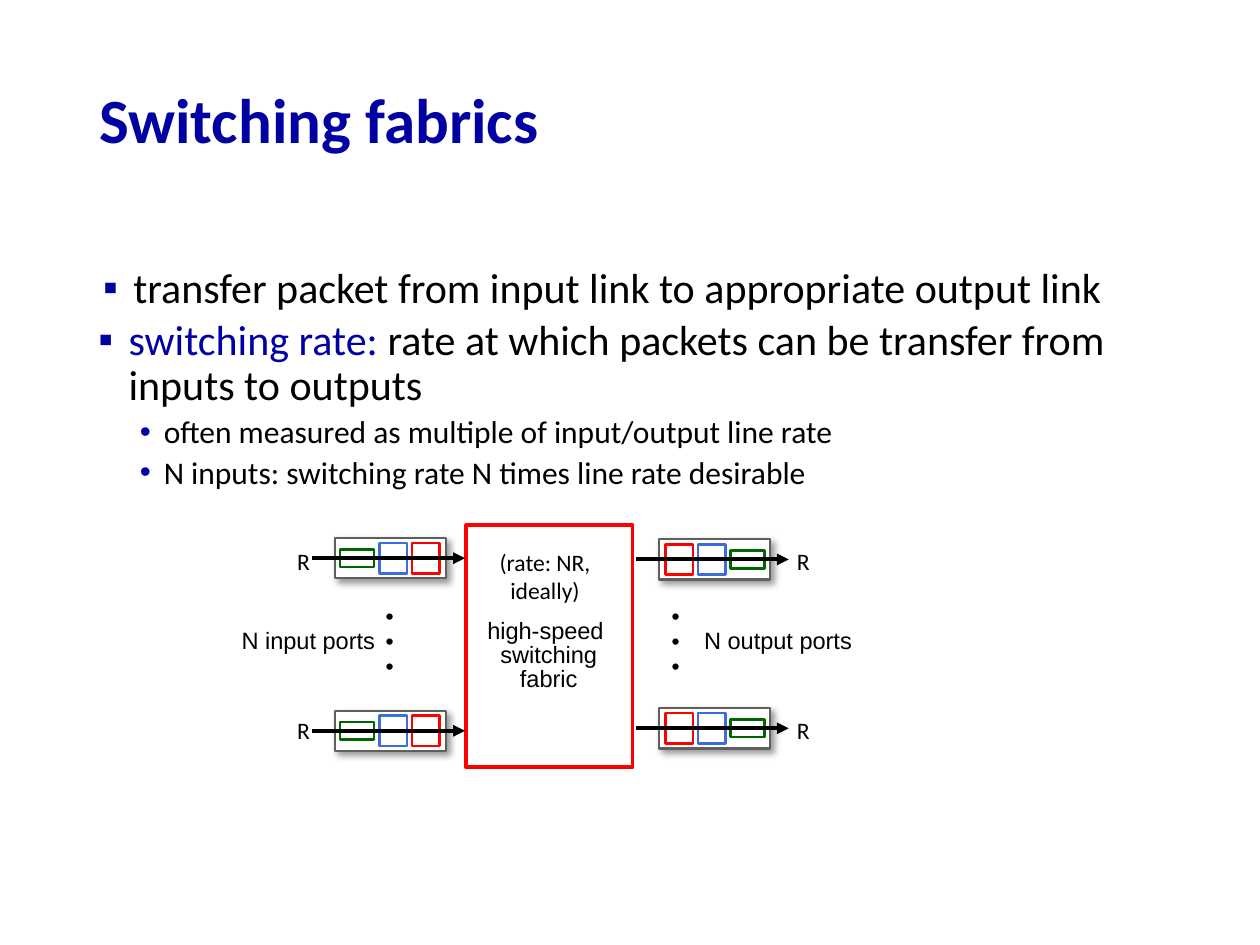
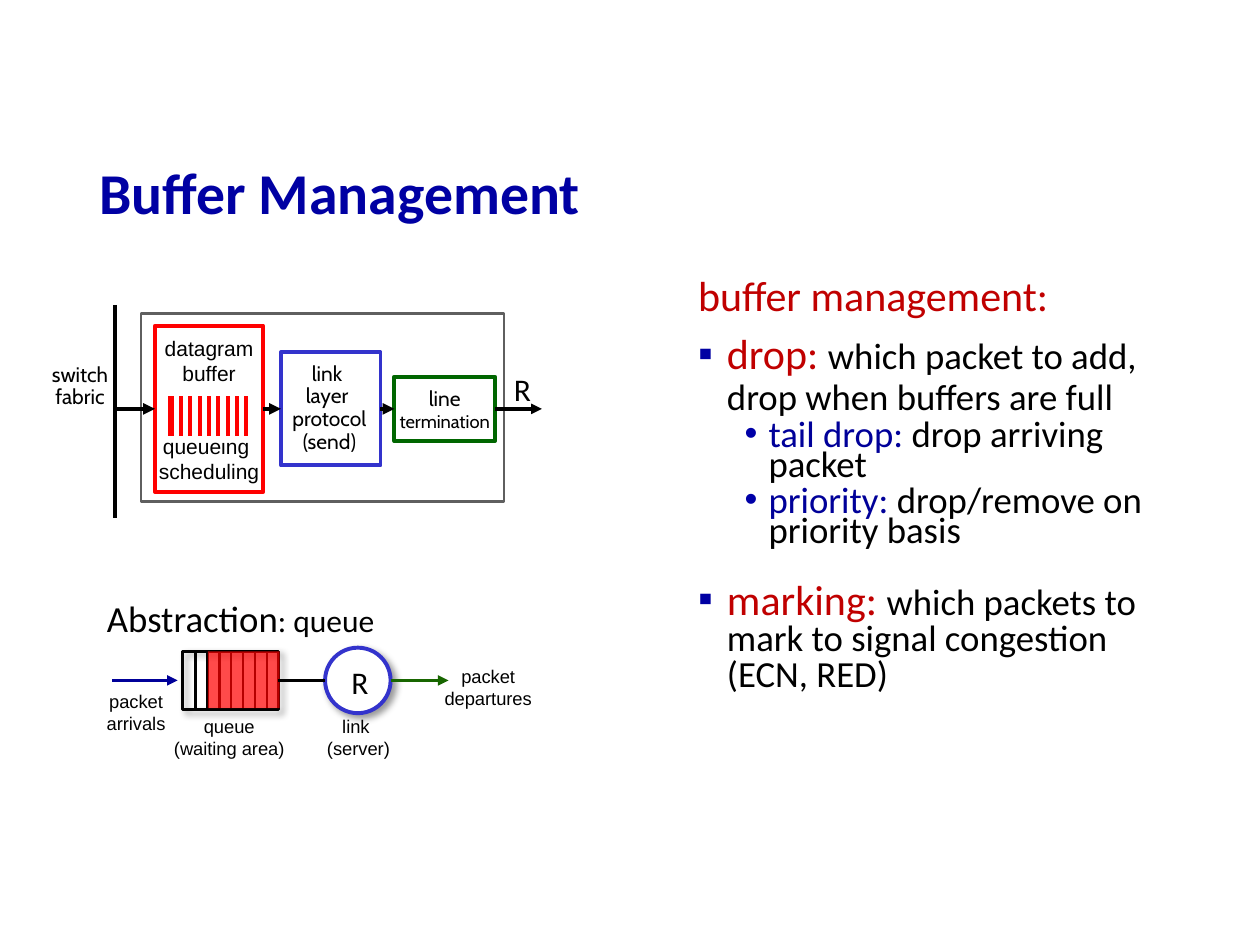
"""Builds two slides on switching fabrics and buffer management."""
import lxml.etree
import pptx
import pptx.dml.color
import pptx.enum.shapes
import pptx.enum.text
import pptx.oxml.ns
import pptx.util

RGB = pptx.dml.color.RGBColor
BLACK = RGB(0x00, 0x00, 0x00)
WHITE = RGB(0xFF, 0xFF, 0xFF)
RED = RGB(0xFF, 0x00, 0x00)
DARK_RED = RGB(0xC0, 0x00, 0x00)
GREEN = RGB(0x00, 0x66, 0x00)
LEAF = RGB(0x18, 0x66, 0x00)
BLUE = RGB(0x3C, 0x6C, 0xDF)
INDIGO = RGB(0x33, 0x33, 0xCC)
NAVY = RGB(0x00, 0x00, 0xA3)
BULLET_NAVY = RGB(0x00, 0x00, 0xA8)
DEEP_NAVY = RGB(0x00, 0x00, 0x99)
GREY = RGB(0x5F, 0x5F, 0x5F)

COLS, ROWS = 100, 75
LEFT, RIGHT = 1, 3
CENTER = pptx.enum.text.PP_ALIGN.CENTER
RECT = pptx.enum.shapes.MSO_SHAPE.RECTANGLE
OVAL = pptx.enum.shapes.MSO_SHAPE.OVAL
LEVELS = {
    "lead": (0.19, -0.18, 7.5, None, None),
    "main": (0.29, -0.24, 7.5, "▪", NAVY),
    "point": (0.24, -0.23, 7.5, "▪", NAVY),
    "late": (0.33, -0.23, 7.5, "▪", NAVY),
    "sub": (0.57, -0.19, 3.8, "•", BULLET_NAVY),
}


def sub(parent, tag, **attrs):
    return lxml.etree.SubElement(parent, pptx.oxml.ns.qn(tag), attrs)


class Deck:
    """Holds the shared style and the current slide."""

    def __init__(self):
        self.prs = pptx.Presentation()
        self.prs.slide_width = pptx.util.Inches(10)
        self.prs.slide_height = pptx.util.Inches(7.5)
        self.s = None

    def x(self, col):
        return round(self.prs.slide_width * col / COLS)

    def y(self, row):
        return round(self.prs.slide_height * row / ROWS)

    def box(self, at):
        col, row, width, height = at
        return self.x(col), self.y(row), self.x(width), self.y(height)

    def slide(self, title, row, height, size):
        self.s = self.prs.slides.add_slide(self.prs.slide_layouts[6])
        tf = self.s.shapes.add_textbox(*self.box((6.9, row, 86.2, height))).text_frame
        tf.word_wrap = True
        tf.vertical_anchor = pptx.enum.text.MSO_ANCHOR.MIDDLE
        self.runs(tf.paragraphs[0], [(title, size, NAVY)], spacing=0.9).font.bold = True

    def runs(self, p, runs, font="Calibri", align=None, spacing=None):
        p.alignment = align
        p.line_spacing = spacing
        for text, size, color in runs:
            r = p.add_run()
            r.text = text
            r.font.name = font
            r.font.size = pptx.util.Pt(size)
            r.font.color.rgb = color
        return r

    def lines(self, tf, lines, size, font="Arial", align=CENTER, spacing=None):
        for i, line in enumerate(lines):
            p = tf.paragraphs[0] if i == 0 else tf.add_paragraph()
            runs = [(line, size, BLACK)] if isinstance(line, str) else line
            self.runs(p, runs, font, align, spacing)
        return tf

    def label(self, at, lines, size, wrap=False, rotation=0, **style):
        sp = self.s.shapes.add_textbox(*self.box(at))
        sp.rotation = rotation
        tf = sp.text_frame
        tf.word_wrap = wrap
        tf.auto_size = pptx.enum.text.MSO_AUTO_SIZE.SHAPE_TO_FIT_TEXT
        return self.lines(tf, lines, size, **style)

    def bullets(self, at, items, inset=(0.07, 0.04)):
        tf = self.s.shapes.add_textbox(*self.box(at)).text_frame
        tf.word_wrap = True
        tf.margin_left = tf.margin_right = pptx.util.Inches(inset[0])
        tf.margin_top = tf.margin_bottom = pptx.util.Inches(inset[1])
        for i, (level, spacing, runs) in enumerate(items):
            margin, indent, before, mark, color = LEVELS[level]
            p = tf.paragraphs[0] if i == 0 else tf.add_paragraph()
            self.runs(p, runs, spacing=spacing)
            p.space_before = pptx.util.Pt(before)
            pPr = p._p.get_or_add_pPr()
            pPr.set("marL", str(pptx.util.Inches(margin)))
            pPr.set("indent", str(pptx.util.Inches(indent)))
            if mark:
                sub(sub(pPr, "a:buClr"), "a:srgbClr", val=str(color))
                sub(pPr, "a:buFont", typeface="Arial")
                sub(pPr, "a:buChar", char=mark)

    def shape(self, at, line=None, width=1.5, fill=WHITE, kind=RECT, shadow=False, alpha=None):
        sp = self.s.shapes.add_shape(kind, *self.box(at))
        sp.shadow.inherit = False
        spPr = sp.element.spPr
        if fill is None:
            sp.fill.background()
        else:
            sp.fill.solid()
            sp.fill.fore_color.rgb = fill
        if alpha:
            color = spPr.find(pptx.oxml.ns.qn("a:solidFill"))[0]
            sub(color, "a:alpha", val=str(alpha * 1000))
        if line is None:
            sp.line.fill.background()
        else:
            sp.line.color.rgb = line
            sp.line.width = pptx.util.Pt(width)
        if shadow:
            effects = spPr.find(pptx.oxml.ns.qn("a:effectLst"))
            outer = sub(effects, "a:outerShdw", blurRad=str(pptx.util.Pt(4)),
                        dist=str(pptx.util.Pt(3)), dir=str(45 * 60000),
                        algn="tl", rotWithShape="0")
            sub(sub(outer, "a:srgbClr", val=str(BLACK)), "a:alpha", val="40000")
        return sp

    def block(self, at, lines, size=12, line=None, spacing=None):
        sp = self.shape(at, line, 2.25)
        sp.text_frame.word_wrap = False
        self.lines(sp.text_frame, lines, size, "Cabin", spacing=spacing)
        return sp

    def line(self, start, end, color=BLACK, width=2.25, arrow=False, begin=None, finish=None):
        c = self.s.shapes.add_connector(
            pptx.enum.shapes.MSO_CONNECTOR.STRAIGHT,
            self.x(start[0]), self.y(start[1]), self.x(end[0]), self.y(end[1]))
        c.line.color.rgb = color
        c.line.width = pptx.util.Pt(width)
        spPr = c.element.spPr
        if arrow:
            sub(spPr.find(pptx.oxml.ns.qn("a:ln")), "a:tailEnd", type="triangle")
        sub(spPr, "a:effectLst")
        if begin:
            c.begin_connect(begin, RIGHT)
        if finish:
            c.end_connect(finish, LEFT)

    def port(self, col, row, mirrored):
        width = 8.8
        self.shape((col, row, width, 3.2), GREY, 1.25, shadow=True)
        for offset, w, h, color in ((5.7, 2.7, 1.4, GREEN), (3.1, 2.2, 2.4, BLUE),
                                    (0.5, 2.2, 2.4, RED)):
            left = width - offset - w if mirrored else offset
            self.shape((col + left, row + (3.2 - h) / 2, w, h), color)
        self.line((col - 1.8, row + 1.6), (col + 10.3, row + 1.6), arrow=True)


def switching_fabrics(d):
    d.slide("Switching fabrics", 4.9, 9.8, 36)
    d.bullets((6.7, 20.7, 90.5, 5.2), [
        ("main", 0.9, [("transfer packet from input link to appropriate output link", 24, BLACK)]),
    ], inset=(0.1, 0.05))
    d.bullets((6.6, 24.9, 90.5, 19), [
        ("main", 0.9, [("switching rate: ", 24, NAVY),
                       ("rate at which packets can be transfer from inputs to outputs", 24, BLACK)]),
        ("sub", 0.9, [("often measured as multiple of input/output line rate", 18, BLACK)]),
        ("sub", 0.9, [("N inputs: switching rate N times line rate desirable", 18, BLACK)]),
    ])
    d.shape((37, 41.7, 13.2, 19.2), RED, 2.25)
    d.label((37.6, 48.7, 11.9, 6.8), ["high-speed ", "switching", "fabric"], 13.5, spacing=0.85)
    d.label((37.8, 43, 10.9, 5.6), ["(rate: NR, ideally)"], 13.5, wrap=True, font="Calibri")
    for col, width, text in ((18.2, 12.7, "N input ports"), (54.9, 13.9, "N output ports")):
        d.label((col, 49.2, width, 3.3), [text], 13.5, align=None)
    for col in (28.5, 51.2):
        d.label((col, 47.9, 7.6, 6.1), [". . . "], 30, wrap=True, rotation=90, font="Calibri")
    for col, row, mirrored in ((26.6, 42.7, True), (26.6, 56.4, True),
                               (52.3, 42.8, False), (52.3, 56.2, False)):
        d.port(col, row, mirrored)
    for col in (22.6, 62.25):
        for row in (42.9, 56.3):
            d.label((col, row, 3.1, 3.3), ["R"], 13.5, font="Calibri", align=None)


def output_port(d):
    axis = 32.45
    d.shape((11.2, 24.9, 28.8, 14.9), GREY)
    termination = d.block((31.3, axis - 2.55, 8, 5.1),
                          ["line", [("termination", 10.5, BLACK)]], line=GREEN)
    link = d.shape((22.3, axis - 4.5, 7.9, 9), INDIGO, 2.25)
    d.block((22.5, 29.2, 7.3, 6.4), ["link ", "layer ", "protocol", "(send)"], spacing=0.9)
    d.block((2.7, 27.5, 7.3, 6.4), ["switch", "fabric"], spacing=0.9)
    buffer = d.shape((12.3, axis - 6.6, 8.6, 13.2), RED, 2.25)
    tf = d.label((11.6, 26.1, 10, 13.1), ["datagram", "buffer", "queueing ", "scheduling"], 12)
    tf.paragraphs[2].space_before = pptx.util.Pt(27.6)
    d.shape((13.1, 31.2, 6.8, 3.6), WHITE, 3, RED)
    for i in range(8):
        col = 14 + 0.74 * i
        d.line((col, 31.3), (col, 34.7), WHITE, 3)
    d.line((9.1, 24.2), (9.1, 41.1))
    d.line((9, axis), (12.3, axis), arrow=True, finish=buffer)
    d.line((20.9, axis), (22.3, axis), arrow=True, begin=buffer, finish=link)
    d.line((30.2, axis), (31.3, axis), arrow=True, begin=link, finish=termination)
    d.line((39.3, axis), (43, axis), width=2, arrow=True, begin=termination)
    d.label((39.8, 28.9, 3.4, 4), ["R"], 18, font="Calibri", align=None)


def queue_abstraction(d):
    axis = 54
    d.label((7.5, 46.8, 23.5, 4.5), [[("Abstraction", 21, BLACK), (": queue", 18, BLACK)]], 21,
            font="Calibri", align=None)
    queue = d.shape((14.5, axis - 2.3, 7.6, 4.6), BLACK, fill=None, shadow=True)
    for i in range(7):
        col = 15.5 + 0.95 * i
        d.line((col, axis - 2.3), (col, axis + 2.3), width=1.5)
    d.shape((16.5, 51.7, 5.7, 4.5), fill=RED, alpha=71)
    d.shape((25.8, axis - 2.6, 5.2, 5.2), INDIGO, 2.25, kind=OVAL, shadow=True)
    d.line((8.9, axis), (14.1, axis), DEEP_NAVY, 2, arrow=True)
    d.line((22.1, axis), (25.8, axis), width=2, begin=queue)
    d.line((31, axis), (35.6, axis), LEAF, 2, arrow=True)
    for col, row, width, lines in ((12.7, 56.3, 11, ["queue", "(waiting area)"]),
                                   (7.4, 54.3, 6.8, ["packet", "arrivals"]),
                                   (34.2, 52.3, 9.1, ["packet", "departures"]),
                                   (24.5, 56.3, 7.5, ["link", " (server)"])):
        d.label((col, row, width, 4.5), lines, 10.5)
    d.label((26.9, 52.1, 3.4, 4), ["R"], 18, font="Calibri", align=None)


def buffer_management(d):
    d.slide("Buffer Management", 11.9, 7.3, 33)
    tight = pptx.util.Pt(17.1)
    d.bullets((54.6, 21.4, 40.7, 41.1), [
        ("lead", 0.9, [("buffer management:", 24, DARK_RED)]),
        ("point", 0.9, [("drop: ", 24, DARK_RED),
                        ("which packet to add, drop when buffers are full", 21, BLACK)]),
        ("sub", tight, [("tail drop: ", 21, DEEP_NAVY), ("drop arriving packet", 21, BLACK)]),
        ("sub", tight, [("priority: ", 21, DEEP_NAVY),
                        ("drop/remove on priority basis", 21, BLACK)]),
    ])
    d.bullets((53.7, 45.9, 40.7, 10), [
        ("late", 0.8, [("marking: ", 24, DARK_RED),
                       ("which packets to mark to signal congestion (ECN, RED)", 21, BLACK)]),
    ])
    output_port(d)
    queue_abstraction(d)


def main():
    d = Deck()
    switching_fabrics(d)
    buffer_management(d)
    d.prs.save("out.pptx")


if __name__ == "__main__":
    main()
